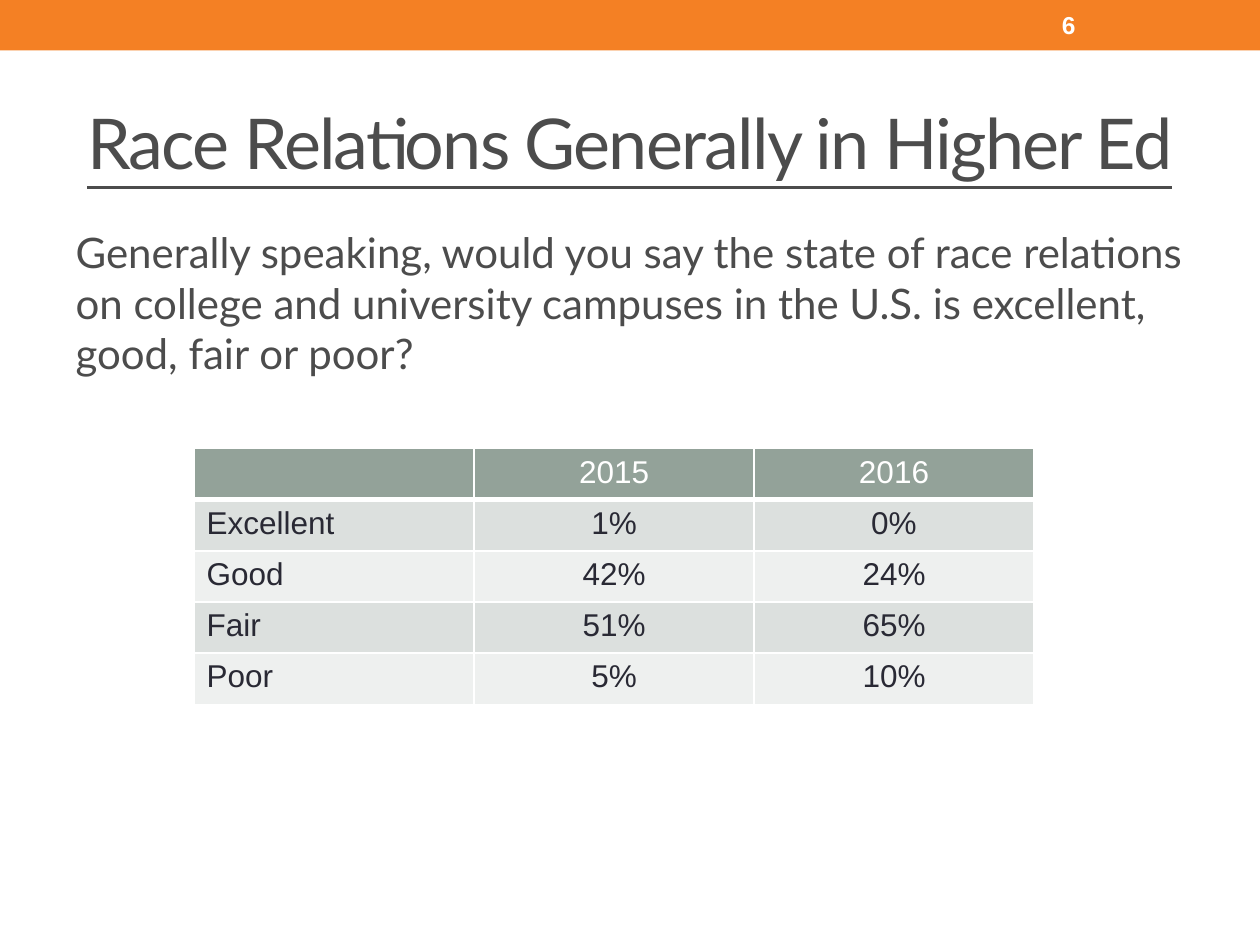
from dataclasses import dataclass

from lxml import etree
from pptx import Presentation
from pptx.dml.color import RGBColor
from pptx.enum.shapes import MSO_SHAPE
from pptx.enum.text import MSO_ANCHOR, MSO_AUTO_SIZE, PP_ALIGN
from pptx.oxml.ns import qn
from pptx.util import Inches, Pt

RECTANGLE = MSO_SHAPE.RECTANGLE
TOP, MIDDLE = MSO_ANCHOR.TOP, MSO_ANCHOR.MIDDLE
LEFT, CENTER = PP_ALIGN.LEFT, PP_ALIGN.CENTER
NO_FIT = MSO_AUTO_SIZE.NONE


@dataclass(frozen=True)
class Theme:
    band: str = "F48024"
    heading: str = "4C4C4C"
    body: str = "292934"
    white: str = "FFFFFF"
    header_fill: str = "93A299"
    row_fills: tuple = ("DCE0DE", "EEF0EF")
    display_font: str = "Lato"
    data_font: str = "Arial"
    title_size: int = 40
    question_size: int = 24
    table_size: int = 18
    number_size: int = 14


THEME = Theme()
MARGIN = 0.5
PAGE_WIDTH, PAGE_HEIGHT = 10, 7.5
CONTENT_WIDTH = PAGE_WIDTH - 2 * MARGIN
RESULTS = [
    ("", "2015", "2016"),
    ("Excellent", "1%", "0%"),
    ("Good", "42%", "24%"),
    ("Fair", "51%", "65%"),
    ("Poor", "5%", "10%"),
]


def write(frame, text, *, size, color, font=THEME.data_font, align=LEFT,
          anchor=TOP, bold=False, underline=False, spacing=None, before=0):
    frame.word_wrap = True
    frame.vertical_anchor = anchor
    para = frame.paragraphs[0]
    para.alignment = align
    para.space_before = Pt(before)
    span = para.add_run()
    span.text = text
    span.font.name = font
    span.font.size = Pt(size)
    span.font.bold = bold
    span.font.underline = underline
    span.font.color.rgb = RGBColor.from_string(color)
    if spacing is not None:
        span.font._element.set("spc", str(round(spacing * 100)))
    return para


def place(shape, box):
    shape.left, shape.top, shape.width, shape.height = map(Inches, box)


def add_band(page, box):
    """Draw the top band with the page number near its right end."""
    left, top, width, height = box
    band = page.shapes.add_shape(RECTANGLE, *map(Inches, box))
    band.shadow.inherit = False
    band.fill.solid()
    band.fill.fore_color.rgb = RGBColor.from_string(THEME.band)
    band.line.fill.background()
    number_width = 1.17
    number_left = left + width - MARGIN - number_width
    number = page.shapes.add_textbox(
        *map(Inches, (number_left, top + 0.02, number_width, height - 0.04)))
    write(number.text_frame, "6", size=THEME.number_size, color=THEME.white,
          bold=True, anchor=MIDDLE)


def add_title(page, box):
    title = page.shapes.title
    place(title, box)
    title.text_frame.auto_size = NO_FIT
    write(title.text_frame, "Race Relations Generally in Higher Ed",
          size=THEME.title_size, color=THEME.heading, font=THEME.display_font,
          align=CENTER, anchor=MIDDLE, underline=True, spacing=-1)


def add_question(page, box):
    body = page.placeholders[1]
    place(body, box)
    body.text_frame.auto_size = NO_FIT
    para = write(
        body.text_frame,
        "Generally speaking, would you say the state of race relations on "
        "college and university campuses in the U.S. is excellent, good, "
        "fair or poor?",
        size=THEME.question_size, color=THEME.heading,
        font=THEME.display_font, before=0.2 * THEME.question_size)
    properties = para._p.get_or_add_pPr()
    properties.set("marL", "0")
    properties.set("indent", "0")
    etree.SubElement(properties, qn("a:buNone"))


def add_borders(cell, bottom_width):
    properties = cell._tc.get_or_add_tcPr()
    widths = {"lnL": 1, "lnR": 1, "lnT": 1, "lnB": bottom_width}
    for side, width in widths.items():
        line = etree.SubElement(properties, qn(f"a:{side}"), w=str(Pt(width)))
        fill = etree.SubElement(line, qn("a:solidFill"))
        etree.SubElement(fill, qn("a:srgbClr"), val=THEME.white)


def add_results(page, box):
    left, top, width, height = map(Inches, box)
    table = page.shapes.add_table(
        len(RESULTS), len(RESULTS[0]), left, top, width, height).table
    for row, values in enumerate(RESULTS):
        is_header = row == 0
        fill = THEME.header_fill if is_header else THEME.row_fills[(row - 1) % 2]
        for column, value in enumerate(values):
            cell = table.cell(row, column)
            add_borders(cell, 3 if is_header else 1)
            cell.fill.solid()
            cell.fill.fore_color.rgb = RGBColor.from_string(fill)
            write(cell.text_frame, value, size=THEME.table_size,
                  color=THEME.white if is_header else THEME.body,
                  align=CENTER if column else LEFT)


def main():
    deck = Presentation()
    deck.slide_width, deck.slide_height = Inches(PAGE_WIDTH), Inches(PAGE_HEIGHT)
    page = deck.slides.add_slide(deck.slide_layouts[1])
    add_band(page, (0, 0, PAGE_WIDTH, 0.4))
    add_title(page, (MARGIN, 0.58, CONTENT_WIDTH, 1.08))
    add_question(page, (MARGIN, 1.75, CONTENT_WIDTH, 5.33))
    add_results(page, (1.54, 3.56, PAGE_WIDTH * 2 / 3, 2.03))
    deck.save("out.pptx")


if __name__ == "__main__":
    main()
